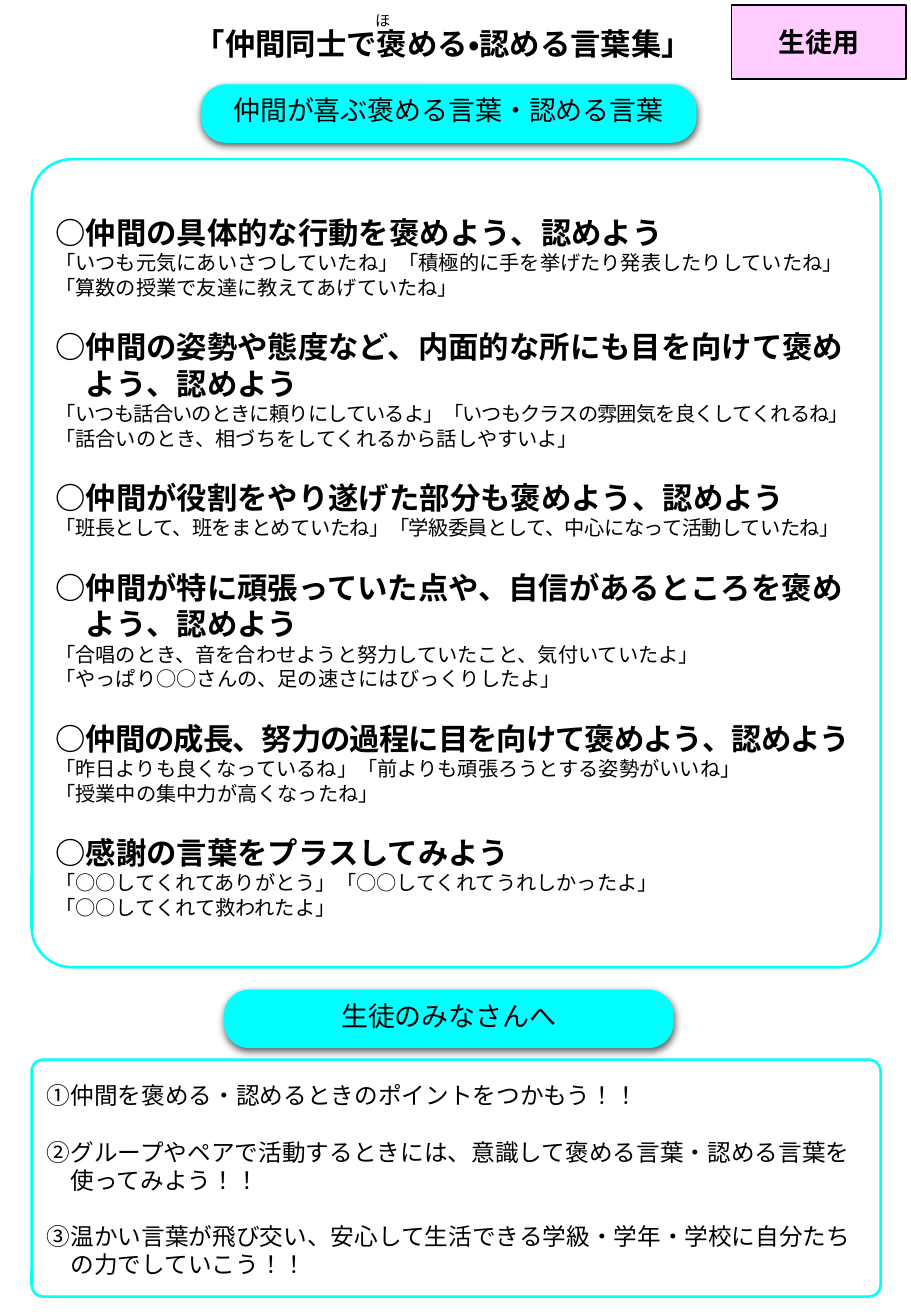
from lxml.etree import SubElement
from pptx import Presentation
from pptx.dml.color import RGBColor
from pptx.enum.shapes import MSO_SHAPE as Shape
from pptx.enum.text import MSO_ANCHOR as Anchor, PP_ALIGN as Align
from pptx.oxml.ns import qn
from pptx.util import Inches, Pt

CYAN, PINK, WHITE, BLACK = "00FFFF", "FFCCFF", "FFFFFF", "000000"
JAPANESE, LATIN = "Noto Sans CJK JP", "Calibri"


def colour(code):
    return RGBColor.from_string(code)


def set_values(target, values):
    for name, value in values.items():
        setattr(target, name, value)


class Sheet:
    """Current page on a grid of 75 columns, each a tenth of an inch."""

    def __init__(self, deck):
        self.page = deck.slides.add_slide(deck.slide_layouts[6])
        self.unit = deck.slide_width / 75

    def area(self, *cells):
        return [round(cell * self.unit) for cell in cells]

    def add_spans(self, para, spans, font, size, bold=False):
        for text, tracking in spans:
            span = para.add_run()
            span.text = text
            set_values(span.font, dict(name=font, size=Pt(size), bold=bold))
            span.font.color.rgb = colour(BLACK)
            props = span.font._element
            props.set("lang", "ja-JP")
            if font == JAPANESE:
                SubElement(props, qn("a:ea"), typeface=font)
            if tracking:
                props.set("spc", str(round(tracking * 100)))

    def fill_frame(self, box, lines, frame=None, **style):
        """Each line is (spans or text, paragraph format, text style)."""
        set_values(box.text_frame, dict(word_wrap=False) | (frame or {}))
        for number, (spans, layout, extra) in enumerate(lines):
            paras = box.text_frame
            para = paras.add_paragraph() if number else paras.paragraphs[0]
            set_values(para, layout)
            spans = [(spans, 0)] if isinstance(spans, str) else spans
            self.add_spans(para, spans, **(style | extra))

    def box(self, cells, fill, line, width, corner=None):
        kind = Shape.RECTANGLE if corner is None else Shape.ROUNDED_RECTANGLE
        box = self.page.shapes.add_shape(kind, *self.area(*cells))
        box.shadow.inherit = False
        if corner is not None:
            box.adjustments[0] = corner
        box.fill.solid()
        box.fill.fore_color.rgb = colour(fill)
        box.line.color.rgb = colour(line)
        box.line.width = Pt(width)
        box.text_frame.vertical_anchor = Anchor.MIDDLE
        return box

    def panel(self, cells, lines, frame):
        box = self.box(cells, WHITE, CYAN, 1.5, 0.05)
        self.fill_frame(box, lines, dict(word_wrap=True) | frame, font=JAPANESE)

    def banner(self, cells, text):
        box = self.box(cells, CYAN, CYAN, 0.75, 0.427)
        effects = box._element.spPr.find(qn("a:effectLst"))
        shadow = SubElement(effects, qn("a:outerShdw"), blurRad=str(Pt(4.5)),
                            dist=str(Pt(1.5)), dir="5400000", rotWithShape="0")
        shade = SubElement(shadow, qn("a:srgbClr"), val=BLACK)
        SubElement(shade, qn("a:alpha"), val="63000")
        layout = dict(alignment=Align.CENTER, line_spacing=Pt(15))
        self.fill_frame(box, [(text, layout, {})], font=JAPANESE, size=16)

    def tag(self, cells, text):
        box = self.box(cells, PINK, BLACK, 0.75)
        layout = dict(alignment=Align.CENTER)
        self.fill_frame(box, [(text, layout, {})], font=LATIN, size=16, bold=True)

    def label(self, cells, text, align, size, wrap, bold=False):
        box = self.page.shapes.add_textbox(*self.area(*cells))
        self.fill_frame(box, [(text, dict(alignment=align), {})],
                        dict(word_wrap=wrap), font=LATIN, size=size, bold=bold)


# Headings and example phrases; a pair is a text and its letter spacing
SECTIONS = [
    (["○仲間の具体的な行動を褒めよう、認めよう"],
     ["「いつも元気にあいさつしていたね」「積極的に手を挙げたり発表したりしていたね」",
      "「算数の授業で友達に教えてあげていたね」"]),
    (["○仲間の姿勢や態度など、内面的な所にも目を向けて褒め", "　よう、認めよう"],
     [[("「", 0),
       ("いつも話合いのときに頼りにしているよ」「いつもクラスの雰囲気を良くしてくれるね」", -0.5),
       ("「話合いのとき、相づちをしてくれるから話しやすいよ」", 0)]]),
    (["○仲間が役割をやり遂げた部分も褒めよう、認めよう"],
     [[("「", 0),
       ("班長として、班をまとめていたね」「学級委員として、中心になって活動していたね」", -0.3)]]),
    (["○仲間が特に頑張っていた点や、自信があるところを褒め", "　よう、認めよう"],
     ["「合唱のとき、音を合わせようと努力していたこと、気付いていたよ」",
      "「やっぱり○○さんの、足の速さにはびっくりしたよ」"]),
    ([[("○", 0), ("仲間の成長、努力の過程に目を向けて褒めよう、認めよう", -0.6)]],
     ["「昨日よりも良くなっているね」「前よりも頑張ろうとする姿勢がいいね」",
      "「授業中の集中力が高くなったね」"]),
    (["○感謝の言葉をプラスしてみよう"],
     ["「○○してくれてありがとう」「○○してくれてうれしかったよ」",
      "「○○してくれて救われたよ」"]),
]
POINTS = [
    ["①仲間を褒める・認めるときのポイントをつかもう！！"],
    ["②グループやペアで活動するときには、意識して褒める言葉・認める言葉を",
     "　使ってみよう！！"],
    ["③温かい言葉が飛び交い、安心して生活できる学級・学年・学校に自分たち",
     "　の力でしていこう！！"],
]


def line_format(align, height, starts_group=False):
    return dict(alignment=align, line_spacing=Pt(height),
                space_before=Pt(16.7 if starts_group else 0))


def phrase_lines():
    for group, (headings, phrases) in enumerate(SECTIONS):
        for line, text in enumerate(headings):
            layout = line_format(Align.LEFT, 21.9, group and not line)
            yield text, layout, dict(size=18, bold=True)
        for text in phrases:
            yield text, line_format(Align.LEFT, 14.5), dict(size=12)


def point_lines():
    for group, lines in enumerate(POINTS):
        for line, text in enumerate(lines):
            layout = line_format(Align.JUSTIFY, 16.7, group and not line)
            yield text, layout, dict(size=14)


def main():
    deck = Presentation()
    set_values(deck, dict(slide_width=Inches(7.5), slide_height=Inches(10.83)))
    sheet = Sheet(deck)

    # Phrase collection
    sheet.panel((2.6, 13.1, 69.9, 66.5), phrase_lines(), dict(margin_top=Inches(0.1)))

    # Title and banners
    sheet.label((13.9, 1.6, 45.2, 4), "「仲間同士で褒める・認める言葉集」",
                Align.CENTER, 18, wrap=False, bold=True)
    sheet.banner((18.5, 81.5, 36.9, 4.7), "生徒のみなさんへ")
    sheet.banner((16.6, 7, 40.7, 4.7), "仲間が喜ぶ褒める言葉・認める言葉")

    # Message to the pupils
    sheet.panel((2.6, 87.2, 69.9, 19.5), point_lines(),
                dict(margin_top=Inches(0.03), margin_bottom=0))

    # Audience tag and reading aid over the title
    sheet.tag((60.2, 0.4, 14.4, 6.1), "生徒用")
    sheet.label((29.9, 0.4, 3.4, 2.5), "ほ", Align.LEFT, 9, wrap=True)

    deck.save("out.pptx")


if __name__ == "__main__":
    main()
